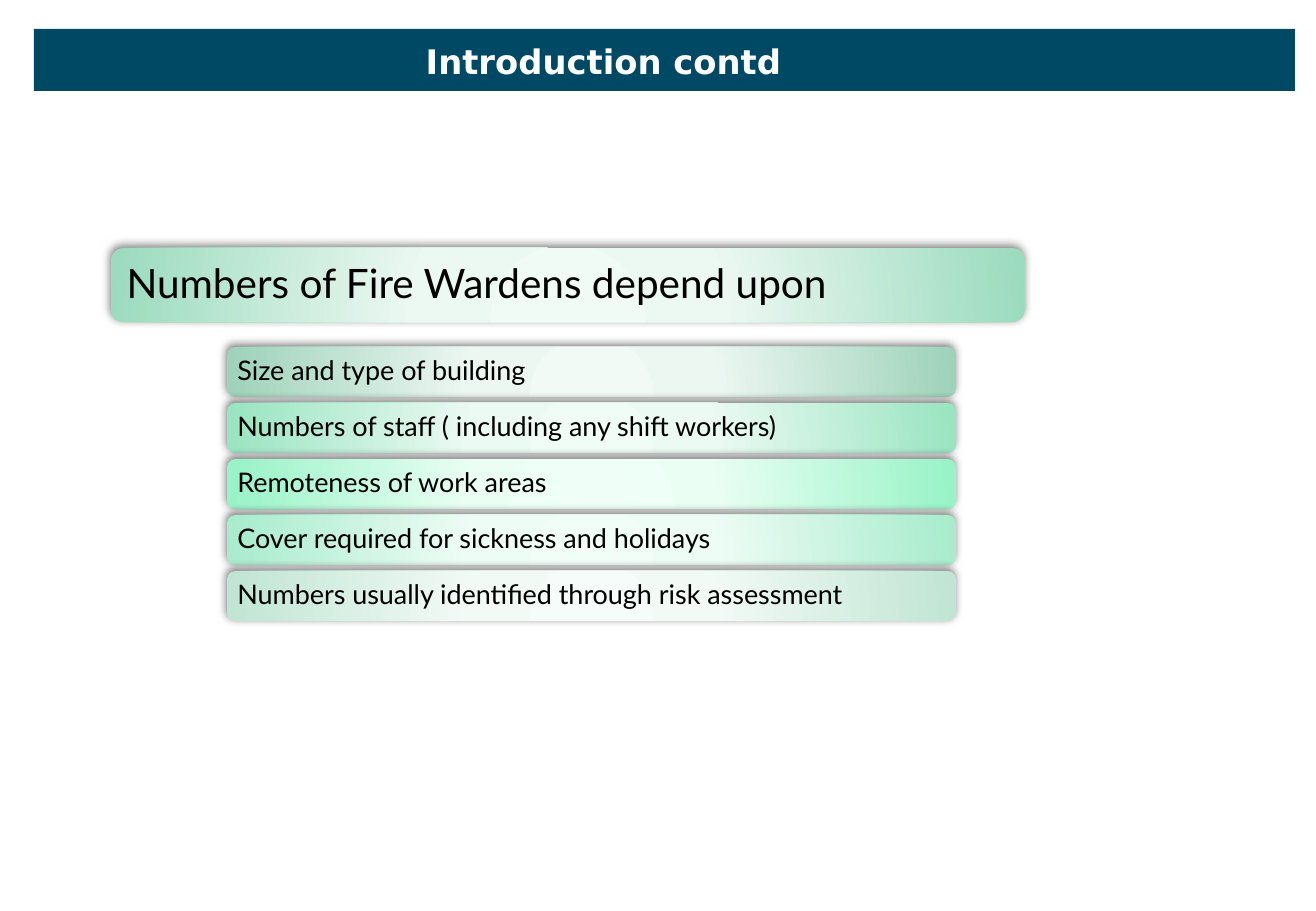
from lxml import etree
from pptx import Presentation
from pptx import util as u
from pptx.dml.color import RGBColor
from pptx.enum import shapes, text
from pptx.oxml import parse_xml
from pptx.oxml.ns import nsdecls, qn

EMU_PER_PX = 914400 / 121.5

TEAL = RGBColor(0x00, 0x49, 0x64)
WHITE = RGBColor(0xFF, 0xFF, 0xFF)
BLACK = RGBColor(0x00, 0x00, 0x00)

HEADING = "Numbers of Fire Wardens depend upon"
HEADING_GLOW = (
    RGBColor(0xF0, 0xFB, 0xF6), RGBColor(0xEC, 0xF8, 0xF2), RGBColor(0x9B, 0xDB, 0xBE))
FACTORS = [
    ("Size and type of building",
     (RGBColor(0xF1, 0xFA, 0xF5), RGBColor(0xEC, 0xF7, 0xF2), RGBColor(0x9E, 0xD2, 0xBA))),
    ("Numbers of staff ( including any shift workers)",
     (RGBColor(0xEF, 0xFD, 0xF6), RGBColor(0xEB, 0xFA, 0xF3), RGBColor(0x99, 0xE4, 0xC1))),
    ("Remoteness of work areas",
     (RGBColor(0xEF, 0xFF, 0xF7), RGBColor(0xEA, 0xFE, 0xF4), RGBColor(0x98, 0xF3, 0xC7))),
    ("Cover required for sickness and holidays",
     (RGBColor(0xF1, 0xFE, 0xF8), RGBColor(0xED, 0xFC, 0xF5), RGBColor(0xA8, 0xEC, 0xCD))),
    ("Numbers usually identified through risk assessment",
     (RGBColor(0xF5, 0xFC, 0xF9), RGBColor(0xF2, 0xFA, 0xF6), RGBColor(0xC0, 0xE5, 0xD4))),
]
FACTOR_TOP = 347
FACTOR_PITCH = 56


def px(length):
    """Turn whole pixels into EMU."""
    return u.Emu(round(length * EMU_PER_PX))


class SlideBuilder:
    """Hold the text style and the current slide."""

    title_font = "DejaVu Sans"
    card_font = "Lato"

    def __init__(self, presentation):
        """Add a blank slide to draw on."""
        self.slide = presentation.slides.add_slide(presentation.slide_layouts[6])

    def shape(self, kind, box):
        """Add a preset shape without outline or shadow."""
        shape = self.slide.shapes.add_shape(kind, *map(px, box))
        shape.line.fill.background()
        shape.shadow.inherit = False
        return shape

    def bar(self, box, color):
        """Add a plain filled band."""
        shape = self.shape(shapes.MSO_SHAPE.RECTANGLE, box)
        shape.fill.solid()
        shape.fill.fore_color.rgb = color

    def run(self, paragraph, words, font, size, color, bold=False):
        """Add one styled run."""
        run = paragraph.add_run()
        run.text = words
        run.font.name = font
        run.font.size = u.Pt(size)
        run.font.bold = bold
        run.font.color.rgb = color

    def title(self, box, words):
        """Add the centred slide title."""
        frame = self.slide.shapes.add_textbox(*map(px, box)).text_frame
        frame.word_wrap = False
        frame.auto_size = text.MSO_AUTO_SIZE.SHAPE_TO_FIT_TEXT
        paragraph = frame.paragraphs[0]
        paragraph.alignment = text.PP_ALIGN.CENTER
        self.run(paragraph, words, self.title_font, 20, WHITE, bold=True)

    def glow(self, shape, colors):
        """Give a shape a circular gradient and a soft shadow."""
        stops = "".join(
            f'<a:gs pos="{position}"><a:srgbClr val="{color}"/></a:gs>'
            for position, color in zip((0, 34000, 100000), colors))
        gradient = parse_xml(
            f'<a:gradFill {nsdecls("a")} rotWithShape="1"><a:gsLst>{stops}</a:gsLst>'
            '<a:path path="circle"><a:fillToRect l="50000" t="155000" r="50000" b="-55000"/>'
            '</a:path></a:gradFill>')
        properties = shape.element.spPr
        properties.find(qn("a:ln")).addprevious(gradient)
        shadow = etree.SubElement(
            properties.find(qn("a:effectLst")), qn("a:outerShdw"),
            blurRad=str(u.Pt(5)), dist=str(u.Pt(2)), dir=str(245 * 60000), rotWithShape="0")
        shade = etree.SubElement(shadow, qn("a:srgbClr"), val=str(BLACK))
        etree.SubElement(shade, qn("a:alpha"), val="50000")

    def card(self, box, words, colors, size, margin):
        """Add a rounded gradient card with its text."""
        shape = self.shape(shapes.MSO_SHAPE.ROUNDED_RECTANGLE, box)
        self.glow(shape, colors)
        frame = shape.text_frame
        frame.word_wrap = True
        frame.vertical_anchor = text.MSO_ANCHOR.MIDDLE
        frame.margin_left = frame.margin_right = px(margin)
        frame.margin_top = frame.margin_bottom = px(margin)
        paragraph = frame.paragraphs[0]
        paragraph.alignment = text.PP_ALIGN.LEFT
        paragraph.line_spacing = 0.9
        self.run(paragraph, words, self.card_font, size, BLACK)


def main():
    """Build and save the slide."""
    presentation = Presentation()
    presentation.slide_width = px(1316)
    presentation.slide_height = px(911)
    builder = SlideBuilder(presentation)
    builder.bar((34, 29, 1261, 62), TEAL)
    builder.card((111, 248, 914, 74), HEADING, HEADING_GLOW, 24, 12)
    for index, (words, colors) in enumerate(FACTORS):
        top = FACTOR_TOP + index * FACTOR_PITCH
        builder.card((227, top, 729, 50), words, colors, 16, 8)
    builder.title((411, 35, 385, 53), "Introduction contd")
    presentation.save("out.pptx")


if __name__ == "__main__":
    main()
